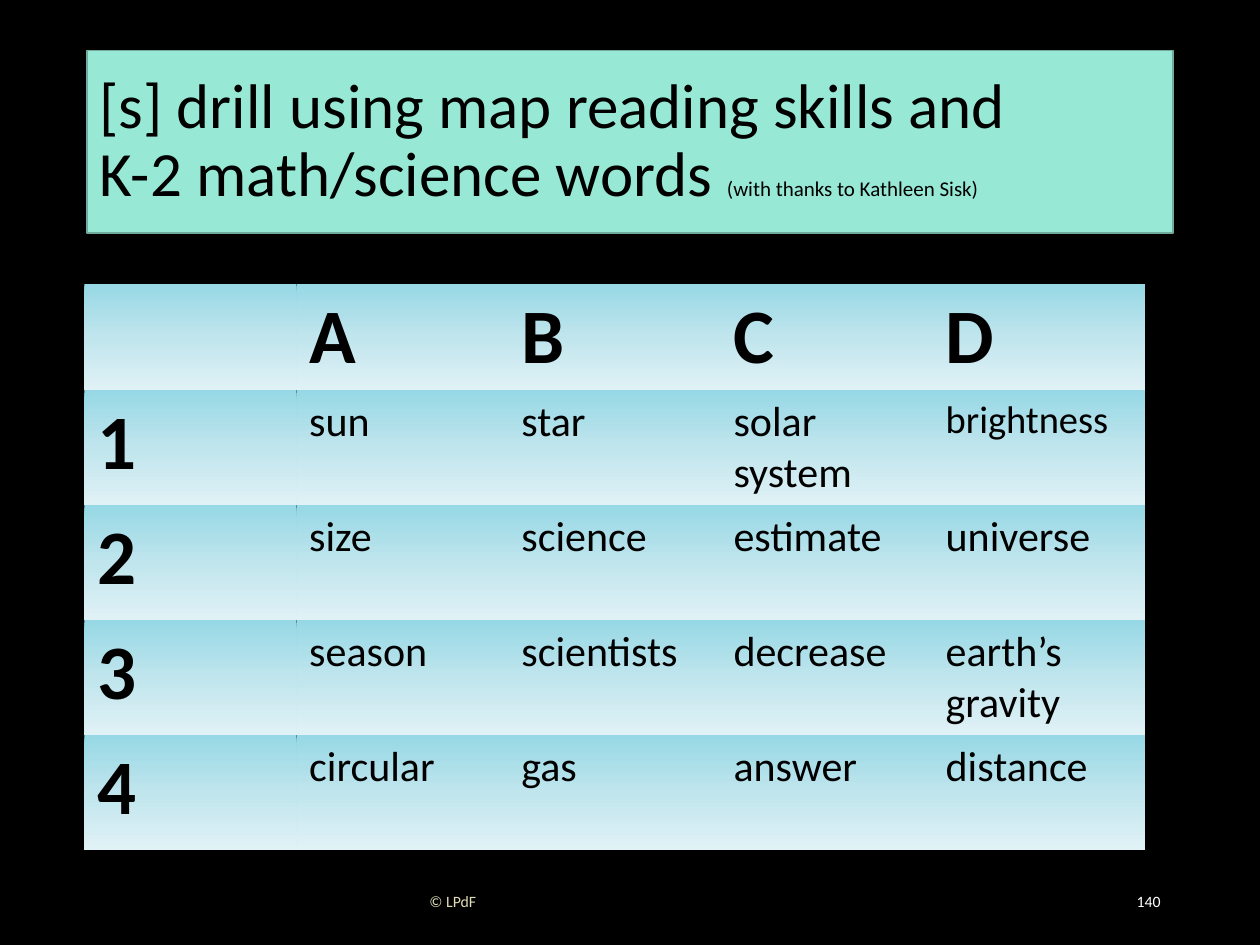
"""Build the [s] drill slide: a title, a map-style word grid and a footer."""
from lxml import etree
from pptx import Presentation
from pptx import util as u
from pptx.dml.color import RGBColor
from pptx.enum import shapes, text
from pptx.oxml.ns import qn

COLORS = {
    "background": "000000",
    "ink": "000000",
    "title_fill": "97E9D5",
    "title_line": "70AC9E",
    "footer": "DFDCB7",
    "number": "FFFFFF",
}
CELL_GRADIENT = [(0, "96D8E5"), (50, "C0E5ED"), (100, "E0F2F6")]
NO_STYLE = "{2D5ABB26-0587-4C30-8999-92F81FD0307C}"
ROW_HEIGHTS = [0.84, 0.91, 0.91, 0.91, 0.91]
WORDS = [
    ["", "A", "B", "C", "D"],
    ["1", "sun", "star", "solar system", "brightness"],
    ["2", "size", "science", "estimate", "universe"],
    ["3", "season", "scientists", "decrease", "earth’s gravity"],
    ["4", "circular", "gas", "answer", "distance"],
]


def rgb(name):
    return RGBColor.from_string(COLORS[name])


def add_run(p, content, size=24, bold=False, color="ink"):
    r = p.add_run()
    r.text = content
    r.font.name = "Calibri"
    r.font.size = u.Pt(size)
    r.font.bold = bold
    r.font.color.rgb = rgb(color)
    return r


def add_title(s):
    sp = s.shapes.add_shape(shapes.MSO_SHAPE.RECTANGLE, u.Inches(0.69),
                            u.Inches(0.4), u.Inches(8.62), u.Inches(1.45))
    sp.shadow.inherit = False
    sp.fill.solid()
    sp.fill.fore_color.rgb = rgb("title_fill")
    sp.line.color.rgb = rgb("title_line")
    sp.line.width = u.Pt(1)
    tf = sp.text_frame
    tf.word_wrap = True
    tf.vertical_anchor = text.MSO_ANCHOR.MIDDLE
    p = tf.paragraphs[0]
    p.alignment = text.PP_ALIGN.LEFT
    p.line_spacing = 0.9
    add_run(p, "[s] drill using map reading skills and", size=36)
    p.add_line_break()
    add_run(p, "K-2 math/science words ", size=36)
    add_run(p, "(with thanks to Kathleen Sisk)", size=12)


def fill_gradient(cell):
    grad = etree.SubElement(cell._tc.get_or_add_tcPr(), qn("a:gradFill"))
    stops = etree.SubElement(grad, qn("a:gsLst"))
    for percent, color in CELL_GRADIENT:
        stop = etree.SubElement(stops, qn("a:gs"), pos=str(percent * 1000))
        etree.SubElement(stop, qn("a:srgbClr"), val=color)
    etree.SubElement(grad, qn("a:lin"), ang="5400000", scaled="0")


def add_word_grid(s):
    frame = s.shapes.add_table(len(WORDS), len(WORDS[0]), u.Inches(0.67),
                               u.Inches(2.25), u.Inches(8.42),
                               u.Inches(sum(ROW_HEIGHTS)))
    table = frame.table
    table.first_row = table.horz_banding = False
    table._tbl.tblPr.find(qn("a:tableStyleId")).text = NO_STYLE
    for i, (words, height) in enumerate(zip(WORDS, ROW_HEIGHTS)):
        table.rows[i].height = u.Inches(height)
        for j, word in enumerate(words):
            cell = table.cell(i, j)
            fill_gradient(cell)
            if word:
                heading = i == 0 or j == 0
                size = 44 if heading else 22 if word == "brightness" else 24
                add_run(cell.text_frame.paragraphs[0], word, size=size,
                        bold=heading)


def add_footer(s, content, left, width, color, align):
    sp = s.shapes.add_textbox(u.Inches(left), u.Inches(6.95),
                              u.Inches(width), u.Inches(0.4))
    tf = sp.text_frame
    tf.word_wrap = True
    tf.vertical_anchor = text.MSO_ANCHOR.MIDDLE
    p = tf.paragraphs[0]
    p.alignment = align
    add_run(p, content, size=9, color=color)


def main():
    prs = Presentation()
    prs.slide_width, prs.slide_height = u.Inches(10), u.Inches(7.5)
    s = prs.slides.add_slide(prs.slide_layouts[6])
    s.background.fill.solid()
    s.background.fill.fore_color.rgb = rgb("background")
    add_word_grid(s)
    add_title(s)
    add_footer(s, "© LPdF", 3.31, 3.38, "footer", text.PP_ALIGN.LEFT)
    add_footer(s, "140", 7.06, 2.25, "number", text.PP_ALIGN.RIGHT)
    prs.save("out.pptx")


if __name__ == "__main__":
    main()
